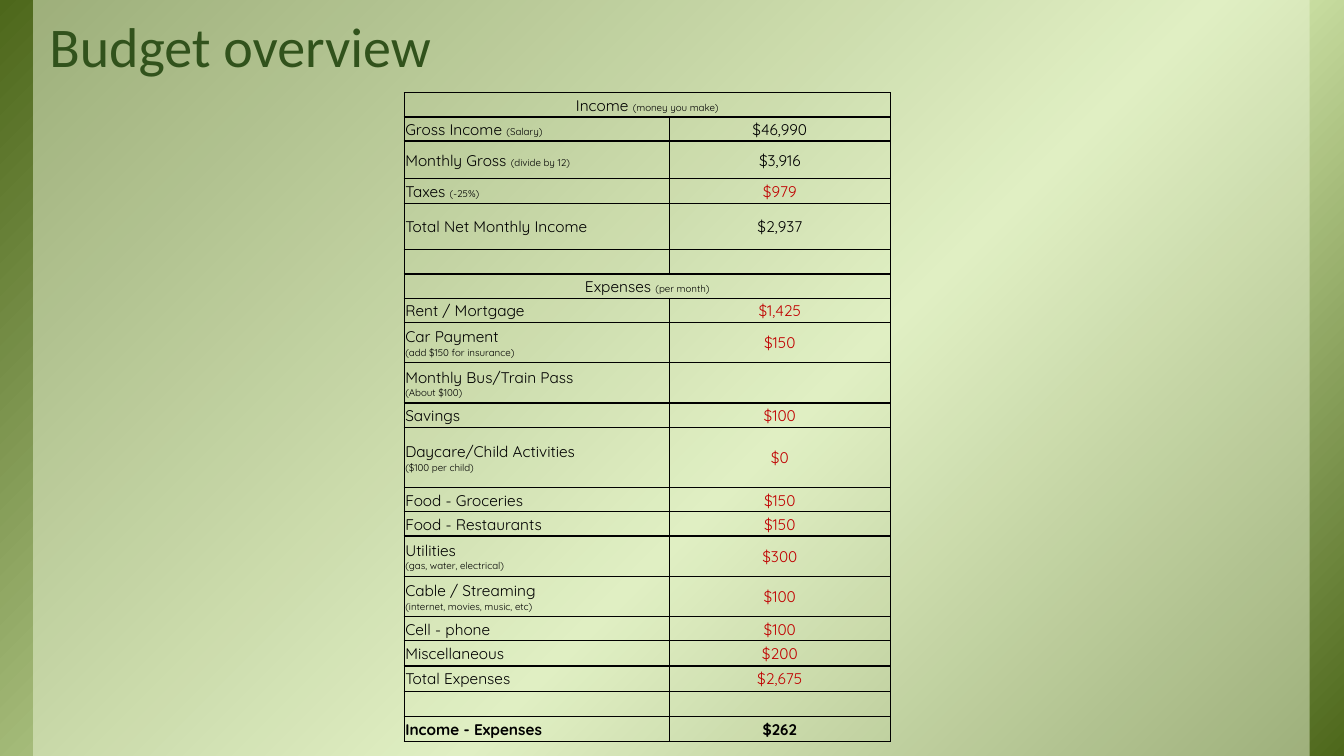
from lxml import etree
from pptx import Presentation
from pptx import util as u
from pptx.dml.color import RGBColor
from pptx.enum import shapes, text
from pptx.oxml import parse_xml
from pptx.oxml.ns import nsdecls, qn

HUES = {"dark": "4D671B", "light": "D6EAAF", "veil": "EBF5D7",
        "title": "31521C", "ink": "000000", "cost": "C00000"}


def write(para, words, size=11, hue="ink", font="Quicksand", bold=False):
    run = para.add_run()
    run.text = words
    run.font.size = u.Pt(size)
    run.font.name = font
    run.font.bold = bold
    run.font.color.rgb = RGBColor.from_string(HUES[hue])


def panel(left, width):
    box = slide.shapes.add_shape(shapes.MSO_SHAPE.RECTANGLE, u.Inches(left), 0,
                                 u.Inches(width), deck.slide_height)
    box.shadow.inherit = False
    box.line.fill.background()
    box.fill.solid()
    return box


deck = Presentation()
deck.slide_width, deck.slide_height = u.Inches(13.33), u.Inches(7.5)
slide = deck.slides.add_slide(deck.slide_layouts[6])

# Diagonal gradient behind the slide
back = panel(0, 13.33)
stops = "".join(f'<a:gs pos="{pos}000"><a:srgbClr val="{HUES[hue]}"/></a:gs>'
                for pos, hue in ((0, "dark"), (58, "light"), (100, "dark")))
props = back.element.spPr
props.replace(props.find(qn("a:solidFill")), parse_xml(
    f'<a:gradFill {nsdecls("a")} rotWithShape="1"><a:gsLst>{stops}</a:gsLst>'
    '<a:lin ang="2700000" scaled="0"/></a:gradFill>'))

# Half-clear veil
veil = panel(0.33, 12.66)
veil.fill.fore_color.rgb = RGBColor.from_string(HUES["veil"])
tint = veil.element.spPr.find(qn("a:solidFill"))[0]
etree.SubElement(tint, qn("a:alpha"), val="50000")

# Title
head = slide.shapes.add_textbox(u.Inches(0.33), u.Inches(-0.68),
                                u.Inches(11.11), u.Inches(1.53)).text_frame
head.word_wrap = True
head.vertical_anchor = text.MSO_ANCHOR.BOTTOM
head.margin_left = head.margin_right = u.Inches(0.13)
head.margin_top = head.margin_bottom = u.Inches(0.07)
title = head.paragraphs[0]
title.line_spacing = 1.15
title.font.size = u.Pt(40)
title._p.get_or_add_pPr().set("marL", str(u.Inches(0.03)))
write(title, "Budget overview", 40, "title", "Calibri")

# Budget rows: height, label, note, value, hue (no value: heading)
BREAK = "\n"
rows = [
    (0.24, "Income ", "(money you make)", None, "ink"),
    (0.24, "Gross Income ", "(Salary)", "$46,990", "ink"),
    (0.37, "Monthly Gross ", "(divide by 12)", "$3,916", "ink"),
    (0.25, "Taxes ", "(-25%)", "$979", "cost"),
    (0.46, "Total Net Monthly Income", "", "$2,937", "ink"),
    (0.24, "", "", "", "ink"),
    (0.24, "Expenses ", "(per month)", None, "ink"),
    (0.24, "Rent / Mortgage", "", "$1,425", "cost"),
    (0.4, "Car Payment " + BREAK, "(add $150 for insurance)", "$150", "cost"),
    (0.4, "Monthly Bus/Train Pass" + BREAK, "(About $100)", "", "cost"),
    (0.24, "Savings", "", "$100", "cost"),
    (0.6, "Daycare/Child Activities" + BREAK, "($100 per child)", "$0", "cost"),
    (0.24, "Food - Groceries", "", "$150", "cost"),
    (0.24, "Food - Restaurants", "", "$150", "cost"),
    (0.4, "Utilities" + BREAK, "(gas, water, electrical)", "$300", "cost"),
    (0.4, "Cable / Streaming" + BREAK, "(internet, movies, music, etc)", "$100", "cost"),
    (0.24, "Cell - phone", "", "$100", "cost"),
    (0.25, "Miscellaneous", "", "$200", "cost"),
    (0.25, "Total Expenses", "", "$2,675", "cost"),
    (0.25, "", "", "", "ink"),
    (0.25, "Income - Expenses", "", "$262", "ink"),
]

# Table grid
grid = slide.shapes.add_table(len(rows), 2, u.Inches(4.01), u.Inches(0.92),
                              u.Inches(4.82), u.Inches(6.5)).table
grid.first_row = grid.horz_banding = False
for col, width in zip(grid.columns, (2.63, 2.19)):
    col.width = u.Inches(width)

# Cell text and borders
for i, (high, label, note, value, hue) in enumerate(rows):
    grid.rows[i].height = u.Inches(high)
    bold = i == len(rows) - 1
    for j in range(2):
        cell = grid.cell(i, j)
        cell.vertical_anchor = text.MSO_ANCHOR.MIDDLE
        cell.margin_left = cell.margin_right = cell.margin_top = u.Inches(0.01)
        cell.margin_bottom = 0
        para = cell.text_frame.paragraphs[0]
        if j or value is None:
            para.alignment = text.PP_ALIGN.CENTER
        if j == 0 and label:
            write(para, label.rstrip(BREAK), bold=bold)
            if label.endswith(BREAK):
                para.add_line_break()
            if note:
                write(para, note, 7)
        elif j and value:
            write(para, value, hue=hue, bold=bold)
        else:
            etree.SubElement(para._p, qn("a:endParaRPr"), sz="1100")
        frame = cell._tc.get_or_add_tcPr()
        for side in "LRTB":
            frame.append(parse_xml(
                f'<a:ln{side} {nsdecls("a")} w="12700"><a:solidFill>'
                f'<a:srgbClr val="{HUES["ink"]}"/></a:solidFill></a:ln{side}>'))
        cell.fill.background()
    if value is None:
        grid.cell(i, 0).merge(grid.cell(i, 1))

deck.save("out.pptx")
